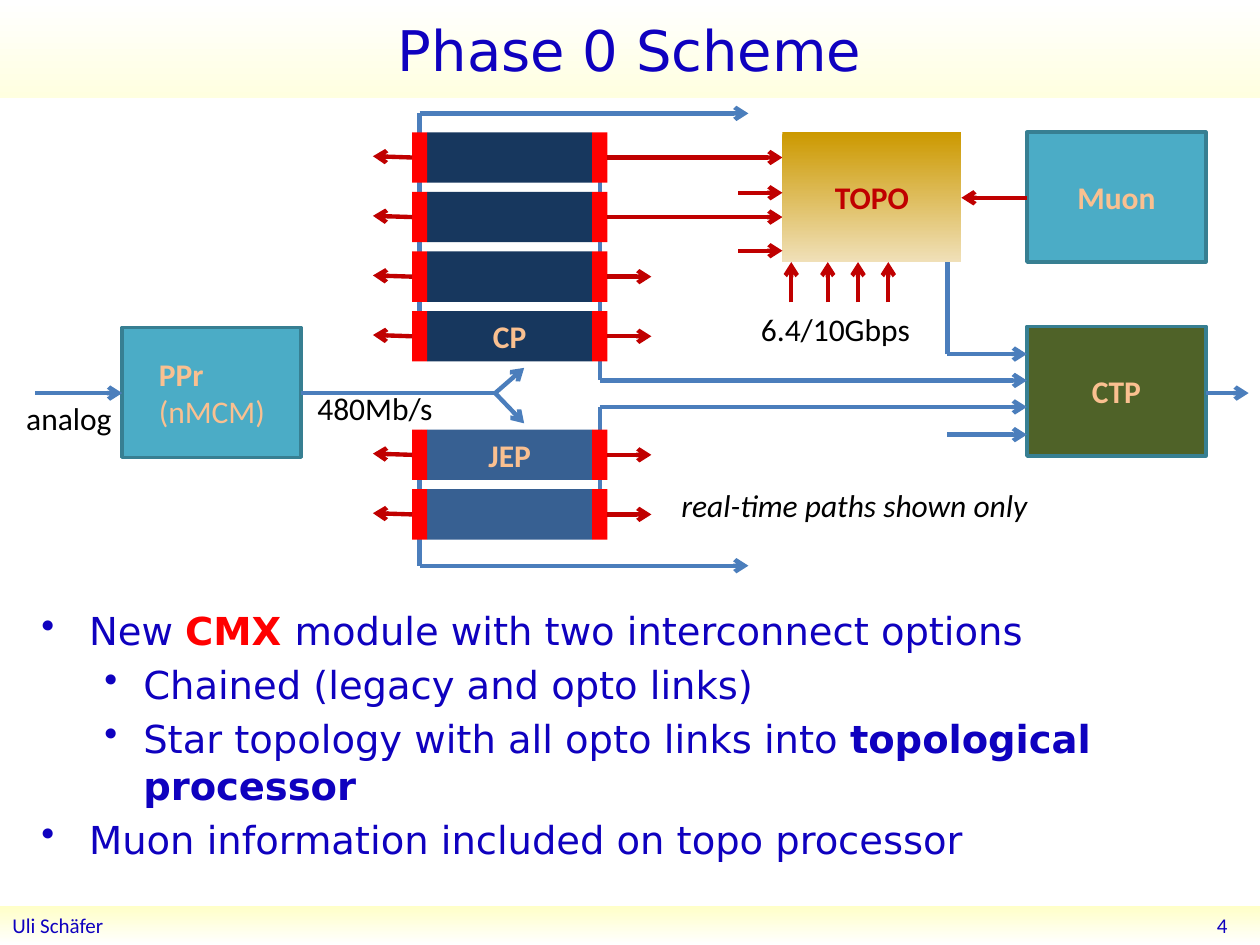
from dataclasses import dataclass

from lxml.etree import SubElement
from pptx import Presentation
from pptx.dml.color import RGBColor
from pptx.enum.shapes import MSO_CONNECTOR, MSO_SHAPE
from pptx.enum.text import MSO_ANCHOR, PP_ALIGN
from pptx.oxml.ns import qn
from pptx.util import Inches, Pt


@dataclass(frozen=True)
class Theme:
    ink: str = "0F01BF"
    black: str = "000000"
    white: str = "FFFFFF"
    cream: str = "FFFFE0"
    lemon: str = "FFFFC8"
    peach: str = "FAC090"
    teal: str = "4BACC6"
    edge: str = "377F92"
    olive: str = "4F6228"
    navy: str = "17375E"
    steel: str = "376092"
    red: str = "FF0000"
    blue: str = "4B7EBC"
    opto: str = "C00000"
    gold: str = "CC9900"
    sand: str = "F0E0B8"
    head: str = "DejaVu Sans"
    sans: str = "Calibri"
    title: int = 32
    body: int = 22
    label: int = 18
    foot: int = 12
    wire: float = 2.5


T = Theme()


def rgb(code):
    return RGBColor.from_string(code)


def style(para, size, color, face=T.sans, bold=False, italic=False):
    font = para.font
    font.size, font.name = Pt(size), face
    font.bold, font.italic = bold, italic
    font.color.rgb = rgb(color)


def rect(shapes, x, y, w, h, fill, edge=None):
    """Plain box; a pair of colours gives a gradient from top to bottom."""
    box = shapes.add_shape(MSO_SHAPE.RECTANGLE, Inches(x), Inches(y), Inches(w), Inches(h))
    box.shadow.inherit = False
    if isinstance(fill, tuple):
        box.fill.gradient()
        box.fill.gradient_angle = 270
        for stop, code in zip(box.fill.gradient_stops, fill):
            stop.color.rgb = rgb(code)
    else:
        box.fill.solid()
        box.fill.fore_color.rgb = rgb(fill)
    if edge:
        box.line.color.rgb = rgb(edge)
        box.line.width = Pt(2)
    else:
        box.line.fill.background()
    return box


def write(box, text, size, color, align=PP_ALIGN.CENTER, **look):
    frame = box.text_frame
    frame.word_wrap = True
    frame.vertical_anchor = MSO_ANCHOR.MIDDLE
    para = frame.paragraphs[0]
    para.text, para.alignment = text, align
    style(para, size, color, **look)
    return para


def note(slide, x, y, w, text, **look):
    box = slide.shapes.add_textbox(Inches(x), Inches(y), Inches(w), Inches(0.4))
    write(box, text, T.label, T.black, PP_ALIGN.LEFT, **look)


def wire(slide, x1, y1, x2, y2, color=T.blue, arrow=True):
    line = slide.shapes.add_connector(
        MSO_CONNECTOR.STRAIGHT, Inches(x1), Inches(y1), Inches(x2), Inches(y2))
    line.line.color.rgb = rgb(color)
    line.line.width = Pt(T.wire)
    props = line.element.spPr
    if arrow:
        SubElement(props.find(qn("a:ln")), qn("a:tailEnd"), type="arrow")
    SubElement(props, qn("a:effectLst"))


def header(slide, x, y, w, h):
    bar = rect(slide.shapes, x, y, w, h, (T.white, T.cream))
    write(bar, "Phase 0 Scheme", T.title, T.ink, face=T.head)


def footer(slide, x, y, w, h):
    bar = rect(slide.shapes, x, y, w, h, (T.lemon, T.white))
    write(bar, "Uli Schäfer", T.foot, T.ink, PP_ALIGN.LEFT)
    page = slide.shapes.add_textbox(Inches(x + w - 2.27), Inches(y), Inches(2.11), Inches(h))
    write(page, "4", T.foot, T.ink, PP_ALIGN.RIGHT)


def crate(slide, x, y, fill, names, ends):
    """Stack of modules with a red CMX strip on either side and opto links."""
    group = slide.shapes.add_group_shape()
    step, tall, strip, core = 0.473, 0.4, 0.12, 1.31
    right = x + strip + core
    for row, (name, end) in enumerate(zip(names, ends)):
        top = y + row * step
        card = rect(group.shapes, x + strip, top, core, tall, fill)
        if name:
            write(card, name, T.label, T.peach, bold=True)
        for side in (x, right):
            rect(group.shapes, side, top, strip, tall, T.red)
        mid = top + tall / 2
        wire(slide, x, mid, x - 0.31, mid - 0.01, T.opto)
        wire(slide, right + strip, mid, end, mid, T.opto)


def block(slide, x, y, text, fill, edge=T.edge, color=T.peach):
    box = rect(slide.shapes, x, y, 1.42, 1.03, fill, edge)
    return box, write(box, text, T.label, color, bold=True)


def scheme(slide, x, y):
    """Whole trigger diagram, with its top left corner at x, y."""
    left, right = x + 3.33, x + 4.76
    topo, ctp, drop = x + 6.21, x + 8.15, x + 7.52
    mid = y + 2.22

    # Rails behind the crates
    for rail, top, low in ((left, 0, 1.66), (left, 2.51, 3.59),
                           (right, 0.46, 2.12), (right, 2.33, 2.98)):
        wire(slide, rail, y + top, rail, y + low, arrow=False)
    for level in (0, 3.59):
        wire(slide, left, y + level, x + 5.94, y + level)

    # Crates
    stub = x + 5.17
    crate(slide, x + 3.27, y + 0.15, T.navy,
          ("", "", "", "CP"), (topo, topo, stub, stub))
    crate(slide, x + 3.27, y + 2.51, T.steel, ("JEP", ""), (stub, stub))

    # Processors
    ppr, para = block(slide, x + 0.97, y + 1.7, "PPr ", T.teal)
    ppr.text_frame.margin_left = Inches(0.29)
    para.alignment = PP_ALIGN.LEFT
    run = para.add_run()
    run.text, run.font.bold = "(nMCM)", False
    block(slide, topo, y + 0.15, "TOPO", (T.gold, T.sand), None, T.opto)
    block(slide, ctp, y + 0.15, "Muon", T.teal)
    block(slide, ctp, y + 1.69, "CTP", T.olive)

    # Real-time input, fork and output
    fork = x + 3.93
    wire(slide, x + 0.28, mid, x + 0.97, mid)
    wire(slide, x + 2.39, mid, fork, mid, arrow=False)
    for tip in (-0.2, 0.24):
        wire(slide, fork, mid, fork + 0.23, mid + tip)
    wire(slide, ctp + 1.42, mid, x + 9.91, mid)

    # Links into CTP
    wire(slide, drop, y + 1.91, drop, y + 1.18, arrow=False)
    for start, level in ((drop, 1.91), (right, 2.12), (right, 2.33), (drop, 2.55)):
        wire(slide, start, y + level, ctp, y + level)

    # Links into TOPO
    wire(slide, ctp, y + 0.67, topo + 1.42, y + 0.67, T.opto)
    for level in (0.63, 1.09):
        wire(slide, topo - 0.35, y + level, topo, y + level, T.opto)
    for gap in (0.07, 0.36, 0.6, 0.84):
        wire(slide, topo + gap, y + 1.5, topo + gap, y + 1.18, T.opto)

    # Notes
    note(slide, x + 0.11, y + 2.22, 1.02, "analog")
    note(slide, x + 2.42, y + 2.14, 1.12, "480Mb/s")
    note(slide, x + 5.94, y + 1.51, 1.42, "6.4/10Gbps")
    note(slide, x + 5.31, y + 2.91, 3.15, "real-time paths shown only", italic=True)


def points(slide, x, y, w, h):
    """Bullets: level, then runs of text with colour and weight."""
    items = (
        (0, (("New ", T.ink, False), ("CMX ", T.red, True),
             ("module with two interconnect options", T.ink, False))),
        (1, (("Chained (legacy and opto links)", T.ink, False),)),
        (1, (("Star topology with all opto links into ", T.ink, False),
             ("topological processor", T.ink, True))),
        (0, (("Muon information included on topo processor", T.ink, False),)),
    )
    frame = slide.shapes.add_textbox(Inches(x), Inches(y), Inches(w), Inches(h)).text_frame
    frame.word_wrap = True
    for index, (level, runs) in enumerate(items):
        para = frame.add_paragraph() if index else frame.paragraphs[0]
        para.level, para.space_before = level, Pt(4.5)
        style(para, T.body, T.ink, T.head)
        margin, hang = ((0.38, 0.38), (0.81, 0.31))[level]
        props = para._p.get_or_add_pPr()
        props.set("marL", str(Inches(margin)))
        props.set("indent", str(-Inches(hang)))
        bullet = props.makeelement(qn("a:buChar"), {"char": "•"})
        props.find(qn("a:defRPr")).addprevious(bullet)
        for text, color, bold in runs:
            run = para.add_run()
            run.text, run.font.bold = text, bold
            run.font.color.rgb = rgb(color)


def main():
    deck = Presentation()
    deck.slide_width, deck.slide_height = Inches(10), Inches(7.5)
    slide = deck.slides.add_slide(deck.slide_layouts[6])
    header(slide, 0, 0, 10, 0.78)
    scheme(slide, 0, 0.9)
    points(slide, 0.23, 4.77, 9.53, 2.34)
    footer(slide, 0, 7.19, 10, 0.31)
    deck.save("out.pptx")


if __name__ == "__main__":
    main()
